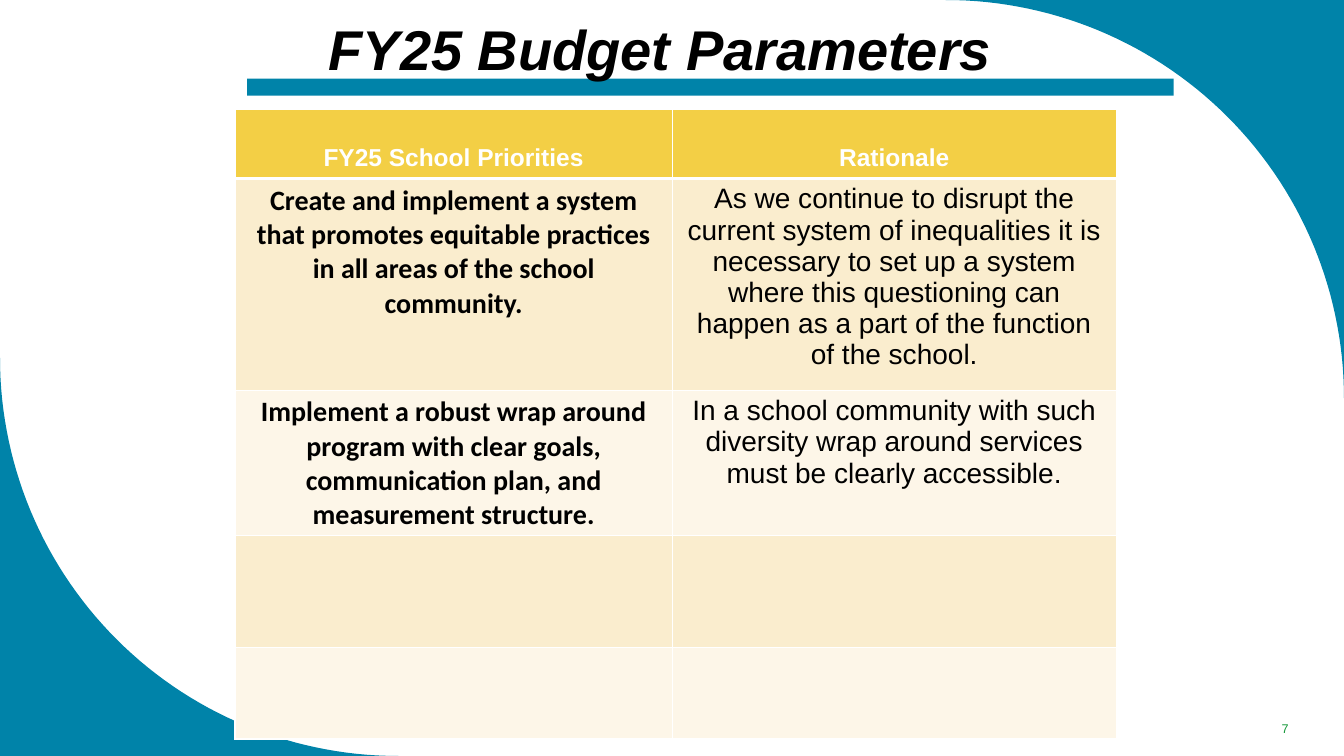
"""Build the FY25 budget parameters slide."""
import math
from dataclasses import dataclass

import lxml.etree
import pptx
import pptx.dml.color
import pptx.enum.shapes
import pptx.enum.text
import pptx.oxml.ns
import pptx.util
from pptx.util import Inches


@dataclass(frozen=True)
class Theme:
    """Colours, fonts and type sizes of the slide."""
    teal: str = "0083A9"
    gold: str = "F3CF45"
    bands: tuple = ("FAEDCE", "FDF6E8")
    white: str = "FFFFFF"
    black: str = "000000"
    green: str = "159839"
    main_font: str = "Arial"
    priority_font: str = "Calibri"
    title_size: float = 40
    header_size: float = 17.5
    body_size: float = 20
    number_size: float = 9


THEME = Theme()
SLIDE_WIDTH, SLIDE_HEIGHT = 13.33, 7.5
CORNER_RADIUS = 3.95
COLUMN_WIDTHS = (4.34, 4.4)
ROW_HEIGHTS = (0.68, 2.09, 1.44, 1.11, 0.91)
HEADINGS = ("FY25 School Priorities", "Rationale")
PRIORITIES = (
    ("Create and implement a system that promotes equitable practices in all areas of the school community.",
     "As we continue to disrupt the current system of inequalities it is necessary to set up a system "
     "where this questioning can happen as a part of the function of the school."),
    ("Implement a robust wrap around program with clear goals, communication plan, and measurement structure.",
     "In a school community with such diversity wrap around services must be clearly accessible."),
    ("", ""),
    ("", ""),
)


def rgb(colour):
    """Return the colour object for a hex string."""
    return pptx.dml.color.RGBColor.from_string(colour)


def paint(shape, colour):
    """Give a shape a flat fill without line or shadow."""
    shape.fill.solid()
    shape.fill.fore_color.rgb = rgb(colour)
    shape.line.fill.background()
    shape.shadow.inherit = False


def write(text_frame, text, size, colour, font=THEME.main_font, bold=False, italic=False):
    """Write one centred paragraph and format its runs."""
    text_frame.text = text
    text_frame.word_wrap = True
    paragraph = text_frame.paragraphs[0]
    paragraph.alignment = pptx.enum.text.PP_ALIGN.CENTER
    paragraph.font.size = pptx.util.Pt(size)
    for run in paragraph.runs:
        run.font.name = font
        run.font.size = pptx.util.Pt(size)
        run.font.bold = bold
        run.font.italic = italic
        run.font.color.rgb = rgb(colour)


def add_corner(slide, corner, centre, start_degrees, steps=60):
    """Fill the area between a slide corner and a quarter circle."""
    angles = [math.radians(start_degrees + 90 * step / steps) for step in range(steps + 1)]
    arc = [(Inches(centre[0] + CORNER_RADIUS * math.cos(angle)),
            Inches(centre[1] + CORNER_RADIUS * math.sin(angle))) for angle in angles]
    outline = slide.shapes.build_freeform(Inches(corner[0]), Inches(corner[1]))
    outline.add_line_segments(arc, close=True)
    paint(outline.convert_to_shape(), THEME.teal)


def add_title_bar(slide):
    """Add the bar below the title."""
    bar = slide.shapes.add_shape(pptx.enum.shapes.MSO_SHAPE.RECTANGLE,
                                 Inches(2.45), Inches(0.78), Inches(9.19), Inches(0.17))
    paint(bar, THEME.teal)


def place_title(slide):
    """Fill the title placeholder and bring it in front of the bar."""
    title = slide.shapes.title
    title.left, title.top = Inches(3.05), Inches(0.09)
    title.width, title.height = Inches(6.99), Inches(0.77)
    write(title.text_frame, "FY25 Budget Parameters", THEME.title_size, THEME.black, bold=True, italic=True)
    title.text_frame.vertical_anchor = pptx.enum.text.MSO_ANCHOR.TOP
    title.text_frame.auto_size = pptx.enum.text.MSO_AUTO_SIZE.NONE
    title.element.getparent().append(title.element)


def add_page_number(slide):
    """Add the slide number at the bottom right."""
    number = slide.shapes.add_textbox(Inches(12.34), Inches(7.08), Inches(0.81), Inches(0.3))
    write(number.text_frame, "7", THEME.number_size, THEME.green)
    number.text_frame.vertical_anchor = pptx.enum.text.MSO_ANCHOR.MIDDLE


def style_cell(cell, fill, top_points, bottom_points):
    """Set white borders and the fill of a table cell."""
    qn = pptx.oxml.ns.qn
    properties = cell._tc.get_or_add_tcPr()
    for side, points in (("L", 1), ("R", 1), ("T", top_points), ("B", bottom_points)):
        border = lxml.etree.SubElement(properties, qn(f"a:ln{side}"), w=str(pptx.util.Pt(points)))
        solid = lxml.etree.SubElement(border, qn("a:solidFill"))
        lxml.etree.SubElement(solid, qn("a:srgbClr"), val=THEME.white)
    cell.fill.solid()
    cell.fill.fore_color.rgb = rgb(fill)


def add_priorities_table(slide):
    """Add the table of school priorities and their rationale."""
    table = slide.shapes.add_table(len(ROW_HEIGHTS), len(COLUMN_WIDTHS), Inches(2.33), Inches(1.09),
                                   Inches(sum(COLUMN_WIDTHS)), Inches(sum(ROW_HEIGHTS))).table
    for column, width in zip(table.columns, COLUMN_WIDTHS):
        column.width = Inches(width)
    for row, height in zip(table.rows, ROW_HEIGHTS):
        row.height = Inches(height)
    for index, heading in enumerate(HEADINGS):
        cell = table.cell(0, index)
        style_cell(cell, THEME.gold, 1, 3)
        write(cell.text_frame, heading, THEME.header_size, THEME.white, bold=True)
        cell.vertical_anchor = pptx.enum.text.MSO_ANCHOR.BOTTOM
        cell.margin_bottom = Inches(0.07)
    for row_index, texts in enumerate(PRIORITIES, start=1):
        for index, text in enumerate(texts):
            cell = table.cell(row_index, index)
            style_cell(cell, THEME.bands[(row_index - 1) % 2], 3 if row_index == 1 else 1, 1)
            is_priority = index == 0
            write(cell.text_frame, text, THEME.body_size, THEME.black,
                  THEME.priority_font if is_priority else THEME.main_font, bold=is_priority)


def main():
    """Build and save the slide."""
    presentation = pptx.Presentation()
    presentation.slide_width, presentation.slide_height = Inches(SLIDE_WIDTH), Inches(SLIDE_HEIGHT)
    slide = presentation.slides.add_slide(presentation.slide_layouts[5])
    add_corner(slide, (SLIDE_WIDTH, 0), (SLIDE_WIDTH - CORNER_RADIUS, CORNER_RADIUS), 270)
    add_corner(slide, (0, SLIDE_HEIGHT), (CORNER_RADIUS, SLIDE_HEIGHT - CORNER_RADIUS), 90)
    add_title_bar(slide)
    place_title(slide)
    add_page_number(slide)
    add_priorities_table(slide)
    presentation.save("out.pptx")


if __name__ == "__main__":
    main()
